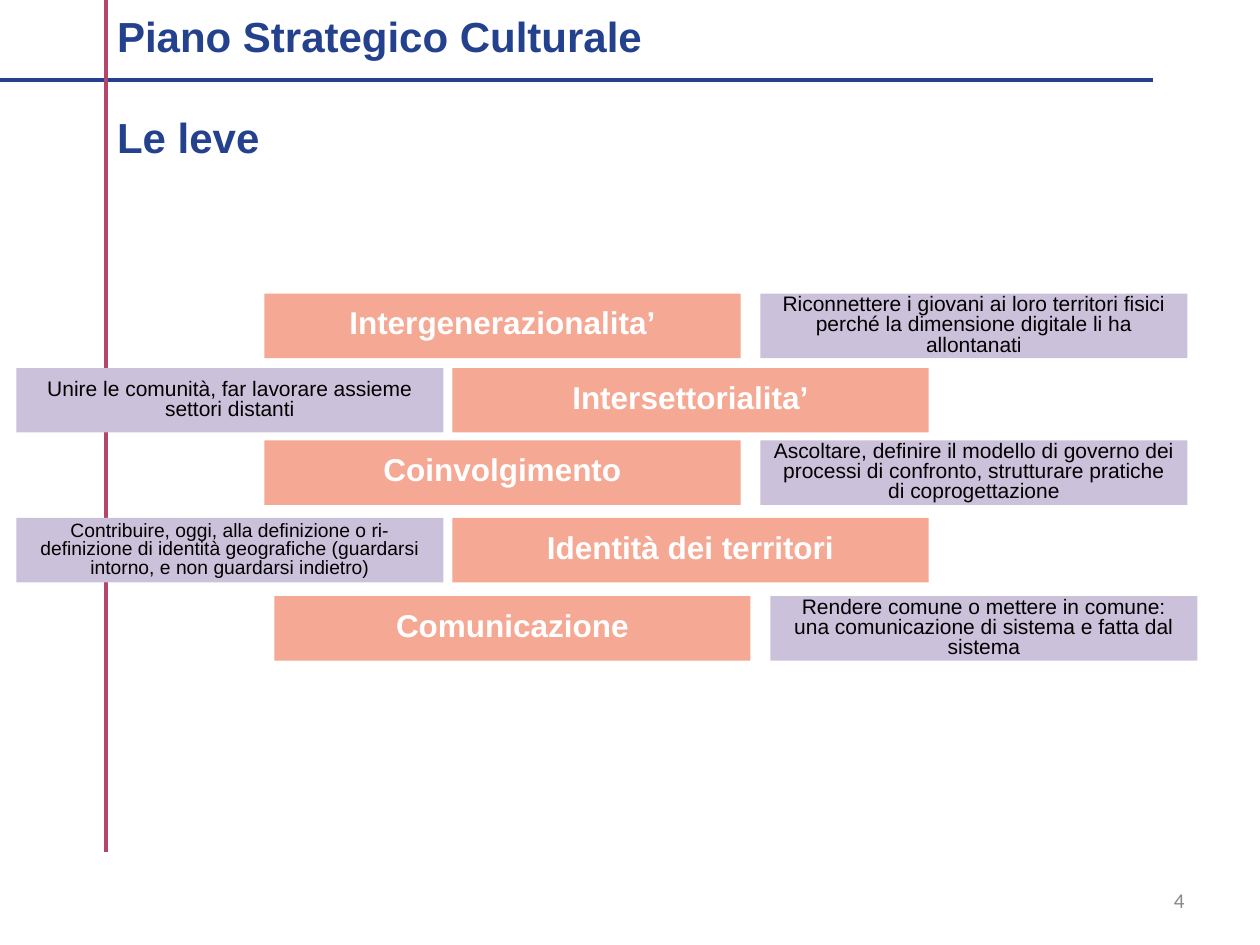
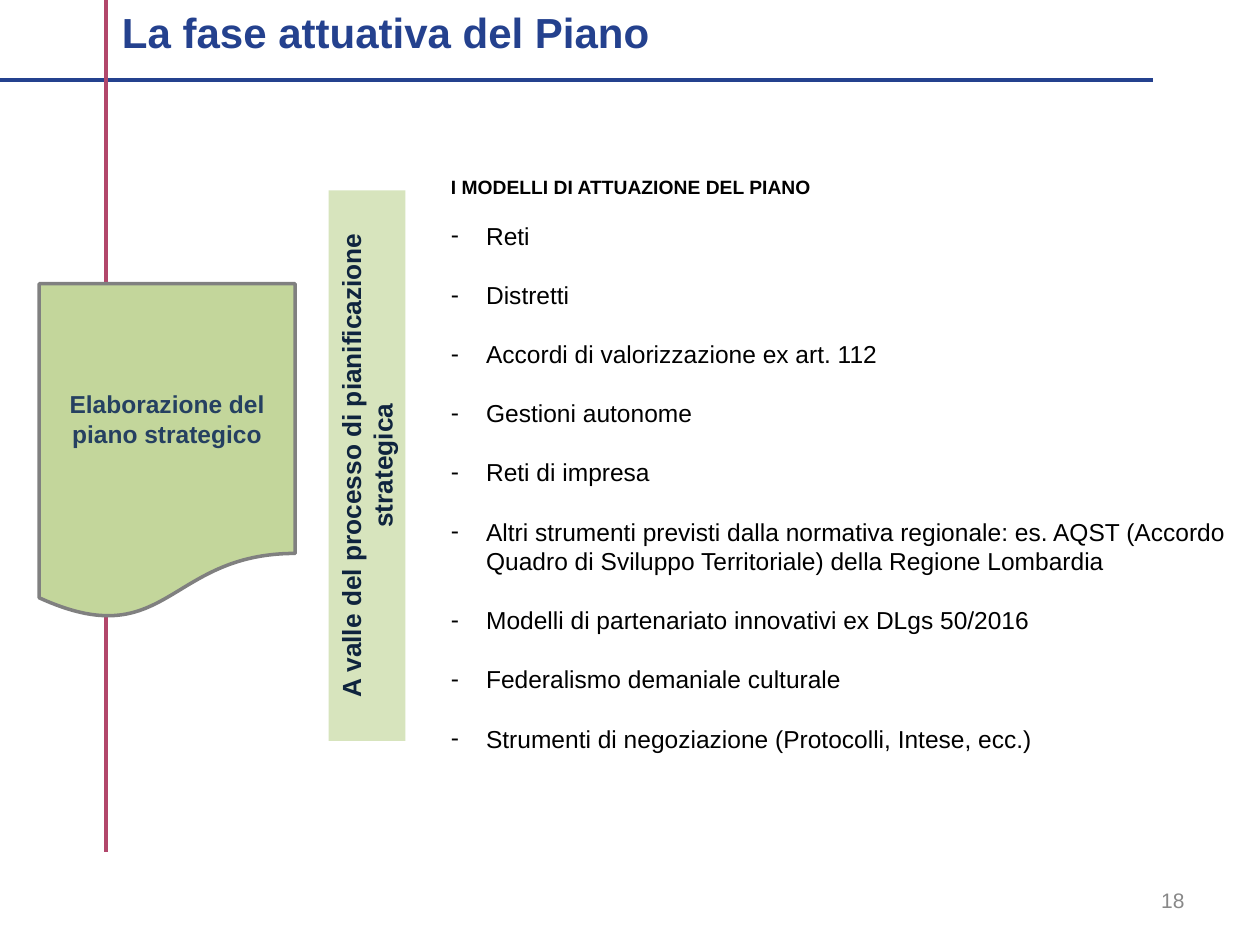
from lxml.etree import SubElement
from pptx import Presentation
from pptx.dml.color import RGBColor
from pptx.enum.shapes import MSO_CONNECTOR, MSO_SHAPE
from pptx.enum.text import MSO_ANCHOR, PP_ALIGN
from pptx.oxml.ns import qn
from pptx.util import Cm, Pt

FONT = "Arial"
HUES = {
    "blue": "24418E", "rose": "B2476B", "gray": "888888", "edge": "808080",
    "peach": "F5A893", "lilac": "CCC1DA", "pale": "D7E4BD", "green": "C3D69B",
    "navy": "254061", "dark": "0F243E", "black": "000000", "white": "FFFFFF",
}

BAR_W, NOTE_W, ROW_H = 9.6, 8.61, 1.3
NOTE_X, BAR_X = 0.33, 9.12  # rows with the note on the left
GAP = 0.4  # between bar and note when the note is on the right

# top, bar left, lever, note, note size
LEVERS = [
    (5.92, 5.33, "Intergenerazionalita’",
     "Riconnettere i giovani ai loro territori fisici perché la dimensione "
     "digitale li ha allontanati", 12),
    (7.42, BAR_X, "Intersettorialita’",
     "Unire le comunità, far lavorare assieme settori distanti", 12),
    (8.88, 5.33, "Coinvolgimento",
     "Ascoltare, definire il modello di governo dei processi di confronto, "
     "strutturare pratiche di coprogettazione", 12),
    (10.44, BAR_X, "Identità dei territori",
     "Contribuire, oggi, alla definizione o ri-definizione di identità "
     "geografiche (guardarsi intorno, e non guardarsi indietro)", 11),
    (12.02, 5.53, "Comunicazione",
     "Rendere comune o mettere in comune: una comunicazione di sistema e "
     "fatta dal sistema", 12),
]

MODELS = [
    "Reti",
    "Distretti",
    "Accordi di valorizzazione ex art. 112",
    "Gestioni autonome",
    "Reti di impresa",
    "Altri strumenti previsti dalla normativa regionale: es. AQST (Accordo "
    "Quadro di Sviluppo Territoriale) della Regione Lombardia",
    "Modelli di partenariato innovativi ex DLgs 50/2016",
    "Federalismo demaniale culturale",
    "Strumenti di negoziazione (Protocolli, Intese, ecc.)",
]


def rgb(hue):
    return RGBColor.from_string(HUES[hue])


def add_run(para, text, size, hue, bold=False, font=FONT):
    run = para.add_run()
    run.text = text
    run.font.name, run.font.size, run.font.bold = font, Pt(size), bold
    run.font.color.rgb = rgb(hue)


def add_box(slide, x, y, w, h, anchor=MSO_ANCHOR.MIDDLE):
    box = slide.shapes.add_textbox(Cm(x), Cm(y), Cm(w), Cm(h))
    box.text_frame.word_wrap = True
    box.text_frame.vertical_anchor = anchor
    return box.text_frame


def add_panel(slide, kind, x, y, w, h, fill, text, size, hue, bold=True):
    """Filled shape without line, with centred text."""
    panel = slide.shapes.add_shape(kind, Cm(x), Cm(y), Cm(w), Cm(h))
    panel.shadow.inherit = False
    panel.fill.solid()
    panel.fill.fore_color.rgb = rgb(fill)
    panel.line.fill.background()
    frame = panel.text_frame
    frame.word_wrap = True
    frame.vertical_anchor = MSO_ANCHOR.MIDDLE
    para = frame.paragraphs[0]
    para.alignment = PP_ALIGN.CENTER
    add_run(para, text, size, hue, bold)
    return panel


def add_rule(slide, x1, y1, x2, y2, hue):
    rule = slide.shapes.add_connector(
        MSO_CONNECTOR.STRAIGHT, Cm(x1), Cm(y1), Cm(x2), Cm(y2))
    rule.line.color.rgb = rgb(hue)
    rule.line.width = Pt(2.25)
    SubElement(rule._element.spPr, qn("a:effectLst"))


def add_title(slide, x, y, w, h, lines):
    frame = add_box(slide, x, y, w, h)
    for i, line in enumerate(lines):
        para = frame.add_paragraph() if i else frame.paragraphs[0]
        if i:
            para.space_before = Pt(29)
        add_run(para, line, 24, "blue", True)


def add_slide(deck, number, font=FONT):
    """Blank slide with the crossed rules and the page number."""
    slide = deck.slides.add_slide(deck.slide_layouts[6])
    add_rule(slide, 0, 1.62, 23.24, 1.62, "blue")
    add_rule(slide, 2.13, 0, 2.13, 17.17, "rose")
    para = add_box(slide, 18.2, 17.65, 5.93, 1.01).paragraphs[0]
    para.alignment = PP_ALIGN.RIGHT
    add_run(para, number, 12, "gray", font=font)
    return slide


def add_lever(slide, top, left, name, note, size):
    side = NOTE_X if left == BAR_X else left + BAR_W + GAP
    bar = add_panel(slide, MSO_SHAPE.RECTANGLE, left, top, BAR_W, ROW_H,
                    "peach", name, 18, "white")
    text = add_panel(slide, MSO_SHAPE.RECTANGLE, side, top, NOTE_W, ROW_H,
                     "lilac", note, size, "black", False)
    for panel in (bar, text):
        panel.text_frame.paragraphs[0].line_spacing = 0.8


def add_list(slide, x, y, w, h, head, items):
    frame = add_box(slide, x, y, w, h, MSO_ANCHOR.TOP)
    add_run(frame.paragraphs[0], head, 11, "black", True)
    for i, item in enumerate(items):
        para = frame.add_paragraph()
        para.space_before = Pt(17 if i else 13)
        props = para._p.get_or_add_pPr()
        props.set("marL", str(Cm(0.71)))
        props.set("indent", str(-Cm(0.71)))
        SubElement(props, qn("a:buFont"), typeface=FONT)
        SubElement(props, qn("a:buChar"), char="-")
        add_run(para, item, 14, "black")


def main():
    deck = Presentation()
    deck.slide_width, deck.slide_height = Cm(25.4), Cm(19.05)

    levers = add_slide(deck, "4", "Calibri")
    add_title(levers, 2.11, 0.15, 22.86, 3.18,
              ["Piano Strategico Culturale", "Le leve"])
    for lever in LEVERS:
        add_lever(levers, *lever)

    phase = add_slide(deck, "18")
    add_title(phase, 2.21, 0, 18.31, 1.27, ["La fase attuativa del Piano"])
    add_list(phase, 8.84, 3.4, 16.56, 11.96,
             "I MODELLI DI ATTUAZIONE DEL PIANO", MODELS)
    band = add_panel(phase, MSO_SHAPE.RECTANGLE, 1.85, 8.61, 11.1, 1.55,
                     "pale", "A valle del processo di pianificazione strategica",
                     15, "dark")
    band.rotation = 270
    band.text_frame.vertical_anchor = MSO_ANCHOR.TOP
    plan = add_panel(phase, MSO_SHAPE.FLOWCHART_DOCUMENT, 0.79, 5.72, 5.16, 6.78,
                     "green", "Elaborazione del piano strategico", 14, "navy")
    plan.line.color.rgb = rgb("edge")
    plan.line.width = Pt(2)

    deck.save("out.pptx")


if __name__ == "__main__":
    main()
